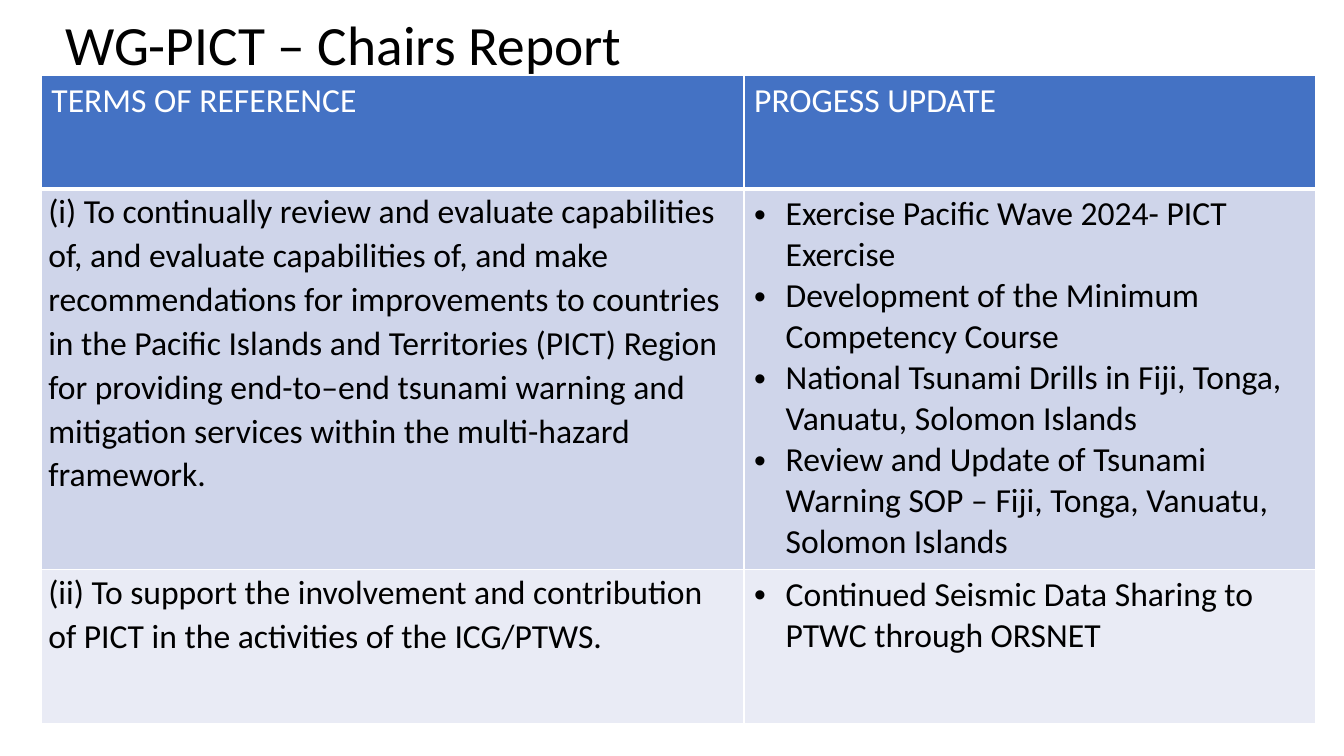
from lxml import etree
from pptx import Presentation
from pptx.dml.color import RGBColor
from pptx.enum.text import MSO_ANCHOR, MSO_AUTO_SIZE, PP_ALIGN
from pptx.oxml.ns import qn
from pptx.util import Pt

MIDDLE, TOP = MSO_ANCHOR.MIDDLE, MSO_ANCHOR.TOP
LEFT = PP_ALIGN.LEFT
NO_FIT = MSO_AUTO_SIZE.NONE
TITLE_ONLY = 5
FONT = "Calibri"
WHITE, BLACK, HEADER_BLUE = "FFFFFF", "000000", "4472C4"
BANDS = ["CFD5EA", "E9EBF5"]
COLUMN_WIDTHS = [502, 408]
ROW_HEIGHTS = [81, 272, 110]
HEADERS = ["TERMS OF REFERENCE", "PROGESS UPDATE"]
ROWS = [
    ("(i) To continually review and evaluate capabilities of, and evaluate "
     "capabilities of, and make recommendations for improvements to countries "
     "in the Pacific Islands and Territories (PICT) Region for providing "
     "end-to–end tsunami warning and mitigation services within the "
     "multi-hazard framework.",
     ["Exercise Pacific Wave 2024- PICT Exercise",
      "Development of the Minimum Competency Course",
      "National Tsunami Drills in Fiji, Tonga, Vanuatu, Solomon Islands",
      "Review and Update of Tsunami Warning SOP – Fiji, Tonga, Vanuatu, "
      "Solomon Islands"]),
    ("(ii) To support the involvement and contribution of PICT in the "
     "activities of the ICG/PTWS.",
     ["Continued Seismic Data Sharing to PTWC through ORSNET"]),
]


def rgb(color):
    return RGBColor.from_string(color)


def add_run(p, text, size, color):
    r = p.add_run()
    r.text = text
    r.font.name = FONT
    r.font.size = Pt(size)
    r.font.bold = False
    r.font.color.rgb = rgb(color)


def add_bullet(p, indent):
    pPr = p._p.get_or_add_pPr()
    pPr.set("marL", str(Pt(indent)))
    pPr.set("indent", str(-Pt(indent)))
    etree.SubElement(pPr, qn("a:buFont"), typeface="Arial")
    etree.SubElement(pPr, qn("a:buChar"), char="•")


def set_borders(cell, top=1, bottom=1):
    """Draw white lines on all sides; they must precede the fill in the XML."""
    tcPr = cell._tc.get_or_add_tcPr()
    sides = [("lnL", 1), ("lnR", 1), ("lnT", top), ("lnB", bottom)]
    for i, (side, width) in enumerate(sides):
        ln = etree.Element(qn("a:" + side), w=str(Pt(width)))
        fill = etree.SubElement(ln, qn("a:solidFill"))
        etree.SubElement(fill, qn("a:srgbClr"), val=WHITE)
        tcPr.insert(i, ln)


def fill_cell(cell, color):
    cell.fill.solid()
    cell.fill.fore_color.rgb = rgb(color)
    cell.vertical_anchor = TOP


def add_title(s, text, left, top, width, height):
    title = s.shapes.title
    title.left, title.top = Pt(left), Pt(top)
    title.width, title.height = Pt(width), Pt(height)
    tf = title.text_frame
    tf.word_wrap = True
    tf.auto_size = NO_FIT
    tf.vertical_anchor = MIDDLE
    p = tf.paragraphs[0]
    p.alignment = LEFT
    p.line_spacing = 0.9
    add_run(p, text, 39.6, BLACK)


def write_term(cell, text):
    cell.margin_left = cell.margin_right = Pt(5)
    cell.margin_top = cell.margin_bottom = 0
    p = cell.text_frame.paragraphs[0]
    p.line_spacing = 1.07
    p.space_after = Pt(8)
    add_run(p, text, 24, BLACK)


def write_updates(cell, updates):
    tf = cell.text_frame
    for i, update in enumerate(updates):
        p = tf.add_paragraph() if i else tf.paragraphs[0]
        add_bullet(p, 22.5)
        add_run(p, update, 24, BLACK)


def add_report_table(s, left, top):
    frame = s.shapes.add_table(len(ROW_HEIGHTS), len(COLUMN_WIDTHS),
                               Pt(left), Pt(top),
                               Pt(sum(COLUMN_WIDTHS)), Pt(sum(ROW_HEIGHTS)))
    table = frame.table
    for column, width in zip(table.columns, COLUMN_WIDTHS):
        column.width = Pt(width)
    for row, height in zip(table.rows, ROW_HEIGHTS):
        row.height = Pt(height)

    for cell, header in zip(table.rows[0].cells, HEADERS):
        fill_cell(cell, HEADER_BLUE)
        set_borders(cell, bottom=3)
        add_run(cell.text_frame.paragraphs[0], header, 24, WHITE)

    for i, (term, updates) in enumerate(ROWS):
        cells = table.rows[i + 1].cells
        for cell in cells:
            fill_cell(cell, BANDS[i % 2])
            set_borders(cell, top=1 if i else 3)
        write_term(cells[0], term)
        write_updates(cells[1], updates)


def main():
    prs = Presentation()
    prs.slide_width, prs.slide_height = Pt(960), Pt(540)
    s = prs.slides.add_slide(prs.slide_layouts[TITLE_ONLY])
    add_title(s, "WG-PICT – Chairs Report", 39.5, 14.5, 855, 39.5)
    add_report_table(s, 29.5, 54)
    prs.save("out.pptx")


if __name__ == "__main__":
    main()
